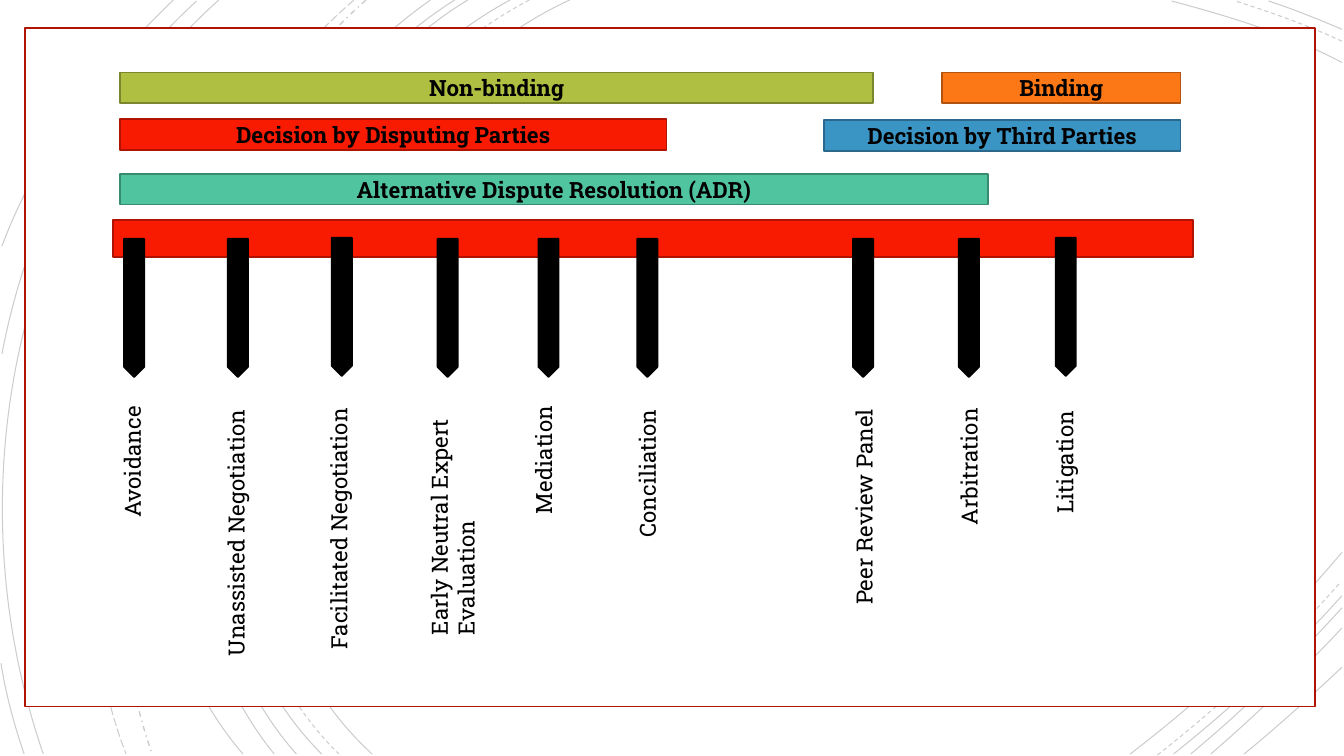
from dataclasses import dataclass

from lxml import etree
from pptx import Presentation
from pptx.dml.color import RGBColor
from pptx.enum.dml import MSO_LINE as Dash
from pptx.enum.shapes import MSO_SHAPE as Preset
from pptx.enum.text import MSO_ANCHOR as Anchor, MSO_AUTO_SIZE as AutoSize, PP_ALIGN as Align
from pptx.oxml.ns import qn
from pptx.util import Inches, Pt

FONT = "Roboto Slab"
BLACK, WHITE, RED, DARK_RED = "000000", "FFFFFF", "F81B02", "AF1301"
ARROW_LENGTH, ARROW_WIDTH = 1.37, 0.2


@dataclass
class Curve:
    start: tuple[float, float]
    control1: tuple[float, float]
    control2: tuple[float, float]
    end: tuple[float, float]
    dash: Dash = Dash.SOLID
    weight: float = 0.75


@dataclass
class Band:
    text: str
    left: float
    top: float
    width: float
    height: float
    fill: str
    line: str


@dataclass
class Method:
    text: str
    arrow_x: float      # centre of the arrow
    label_x: float      # centre of the label
    label_bottom: float
    label_length: float
    arrow_top: float = 2.37
    label_depth: float = 0.37


CURVES = [
    Curve((5.65, 0), (3.15, 1.15), (1.43, 5.4), (3.69, 7.48)),
    Curve((13.31, 0.62), (12.78, 0.34), (12.18, 0.16), (11.62, 0.01)),
    Curve((11.21, 7.48), (11.97, 6.9), (12.69, 6.22), (13.31, 5.48)),
    Curve((5.25, 0), (2.85, 1.25), (1.23, 5.37), (3.36, 7.48), Dash.DASH),
    Curve((13.31, 0.41), (12.97, 0.25), (12.6, 0.12), (12.25, 0.01), Dash.DASH),
    Curve((11.48, 7.49), (12.13, 6.98), (12.75, 6.4), (13.3, 5.77), Dash.DASH),
    Curve((5.06, 0), (2.7, 1.27), (1.1, 5.37), (3.19, 7.48)),
    Curve((13.31, 0.29), (13.07, 0.19), (12.83, 0.09), (12.58, 0.01)),
    Curve((11.64, 7.48), (12.23, 7.01), (12.8, 6.48), (13.31, 5.91)),
    Curve((4.64, 0), (2.44, 1.33), (1.1, 5.41), (2.94, 7.48)),
    Curve((11.81, 7.48), (12.34, 7.04), (12.84, 6.55), (13.31, 6.03)),
    Curve((4.51, 0), (2.31, 1.38), (0.97, 5.33), (2.72, 7.48)),
    Curve((12.01, 7.48), (12.46, 7.09), (12.9, 6.67), (13.31, 6.23)),
    Curve((4.27, 0), (2.17, 1.47), (0.53, 5.29), (2.41, 7.48)),
    Curve((12.34, 7.48), (12.67, 7.21), (12.99, 6.92), (13.31, 6.62)),
    Curve((3.63, 0), (1.76, 1.66), (0.65, 5.09), (1.51, 7.48), Dash.DASH_DOT, 1),
    Curve((3.51, 0), (1.57, 1.69), (0.29, 4.99), (1.25, 7.48), Dash.LONG_DASH),
    Curve((2.17, 0), (0.11, 1.85), (-0.46, 4.9), (0.43, 7.48)),
    Curve((1.95, 0.01), (0.92, 0.96), (0.28, 2.14), (0.02, 3.51)),
    Curve((0.01, 6.58), (0.06, 6.89), (0.14, 7.19), (0.24, 7.48)),
    Curve((1.72, 0), (1, 0.69), (0.37, 1.5), (0.02, 2.44)),
]

METHODS = [
    Method("Avoidance", 1.33, 1.31, 5.23, 1.44),
    Method("Unassisted Negotiation", 2.36, 2.34, 6.61, 3.01),
    Method("Facilitated Negotiation", 3.39, 3.36, 6.54, 3.53, arrow_top=2.36),
    Method("Early Neutral Expert \nEvaluation", 4.44, 4.49, 6.4, 3.82, label_depth=0.64),
    Method("Mediation", 5.44, 5.39, 5.2, 1.64),
    Method("Conciliation", 6.42, 6.42, 5.43, 1.64),
    Method("Peer Review Panel", 8.56, 8.57, 6.1, 3.04),
    Method("Arbitration", 9.61, 9.61, 5.31, 1.64),
    Method("Litigation", 10.57, 10.56, 5.19, 1.64, arrow_top=2.36),
]

BANDS = [
    Band("Non-binding", 1.19, 0.72, 7.47, 0.3, "AFBF41", "7B872E"),
    Band("Binding", 9.34, 0.72, 2.37, 0.3, "FC7715", "B2540F"),
    Band("Decision by Disputing Parties", 1.19, 1.18, 5.42, 0.31, RED, DARK_RED),
    Band("Decision by Third Parties", 8.17, 1.19, 3.54, 0.31, "3B95C4", "2A698B"),
    Band("Alternative Dispute Resolution (ADR)", 1.19, 1.73, 8.61, 0.3, "50C49F", "388B71"),
]


def color(value: str) -> RGBColor:
    return RGBColor.from_string(value)


def write(shape, text: str, *, bold: bool = False, align=Align.LEFT,
          anchor=Anchor.TOP, auto_size=AutoSize.NONE) -> None:
    frame = shape.text_frame
    frame.word_wrap = True
    frame.auto_size = auto_size
    frame.vertical_anchor = anchor
    paragraph = frame.paragraphs[0]
    paragraph.text = text
    paragraph.alignment = align
    for run in paragraph.runs:
        run.font.name = FONT
        run.font.size = Pt(16)
        run.font.bold = bold
        run.font.color.rgb = color(BLACK)


def add_block(slide, preset: Preset, left: float, top: float, width: float,
              height: float, fill: str, line: str):
    block = slide.shapes.add_shape(preset, Inches(left), Inches(top),
                                   Inches(width), Inches(height))
    block.shadow.inherit = False
    block.fill.solid()
    block.fill.fore_color.rgb = color(fill)
    block.line.color.rgb = color(line)
    block.line.width = Pt(1.25)
    return block


def add_curve(group, curve: Curve) -> None:
    start, *rest = [(Inches(x), Inches(y)) for x, y in
                    (curve.start, curve.control1, curve.control2, curve.end)]
    builder = group.shapes.build_freeform(*start)
    builder.add_line_segments(rest, close=False)
    arc = builder.convert_to_shape()
    arc.shadow.inherit = False
    arc.fill.background()
    arc.line.color.rgb = color(BLACK)
    arc.line.width = Pt(curve.weight)
    arc.line.dash_style = curve.dash
    # Turn the three segments into one Bézier segment
    outline = next(arc.element.iter(qn("a:path")))
    bezier = etree.SubElement(outline, qn("a:cubicBezTo"))
    for segment in outline.findall(qn("a:lnTo")):
        bezier.append(segment[0])
        outline.remove(segment)
    # Make the line 20 % opaque
    line_color = next(arc.line._ln.iter(qn("a:srgbClr")))
    etree.SubElement(line_color, qn("a:alpha"), val="20000")


def add_method(slide, method: Method) -> None:
    middle = method.arrow_top + ARROW_LENGTH / 2
    arrow = add_block(slide, Preset.PENTAGON, method.arrow_x - ARROW_LENGTH / 2,
                      middle - ARROW_WIDTH / 2, ARROW_LENGTH, ARROW_WIDTH, BLACK, BLACK)
    arrow.rotation = 90
    middle = method.label_bottom - method.label_length / 2
    label = slide.shapes.add_textbox(
        Inches(method.label_x - method.label_length / 2),
        Inches(middle - method.label_depth / 2),
        Inches(method.label_length), Inches(method.label_depth))
    label.rotation = 270
    write(label, method.text, auto_size=AutoSize.SHAPE_TO_FIT_TEXT)


def add_band(slide, band: Band) -> None:
    block = add_block(slide, Preset.RECTANGLE, band.left, band.top, band.width,
                      band.height, band.fill, band.line)
    write(block, band.text, bold=True, align=Align.CENTER, anchor=Anchor.MIDDLE)


def main() -> None:
    deck = Presentation()
    deck.slide_width, deck.slide_height = Inches(13.33), Inches(7.5)
    slide = deck.slides.add_slide(deck.slide_layouts[6])

    # Background curves
    backdrop = slide.shapes.add_group_shape()
    for curve in CURVES:
        add_curve(backdrop, curve)

    # Frame and spectrum bar
    add_block(slide, Preset.RECTANGLE, 0.25, 0.28, 12.79, 6.73, WHITE, DARK_RED)
    add_block(slide, Preset.RECTANGLE, 1.12, 2.18, 10.71, 0.37, RED, DARK_RED)

    # Resolution methods below the bar, their categories above it
    for method in METHODS:
        add_method(slide, method)
    for band in BANDS:
        add_band(slide, band)

    deck.save("out.pptx")


if __name__ == "__main__":
    main()
